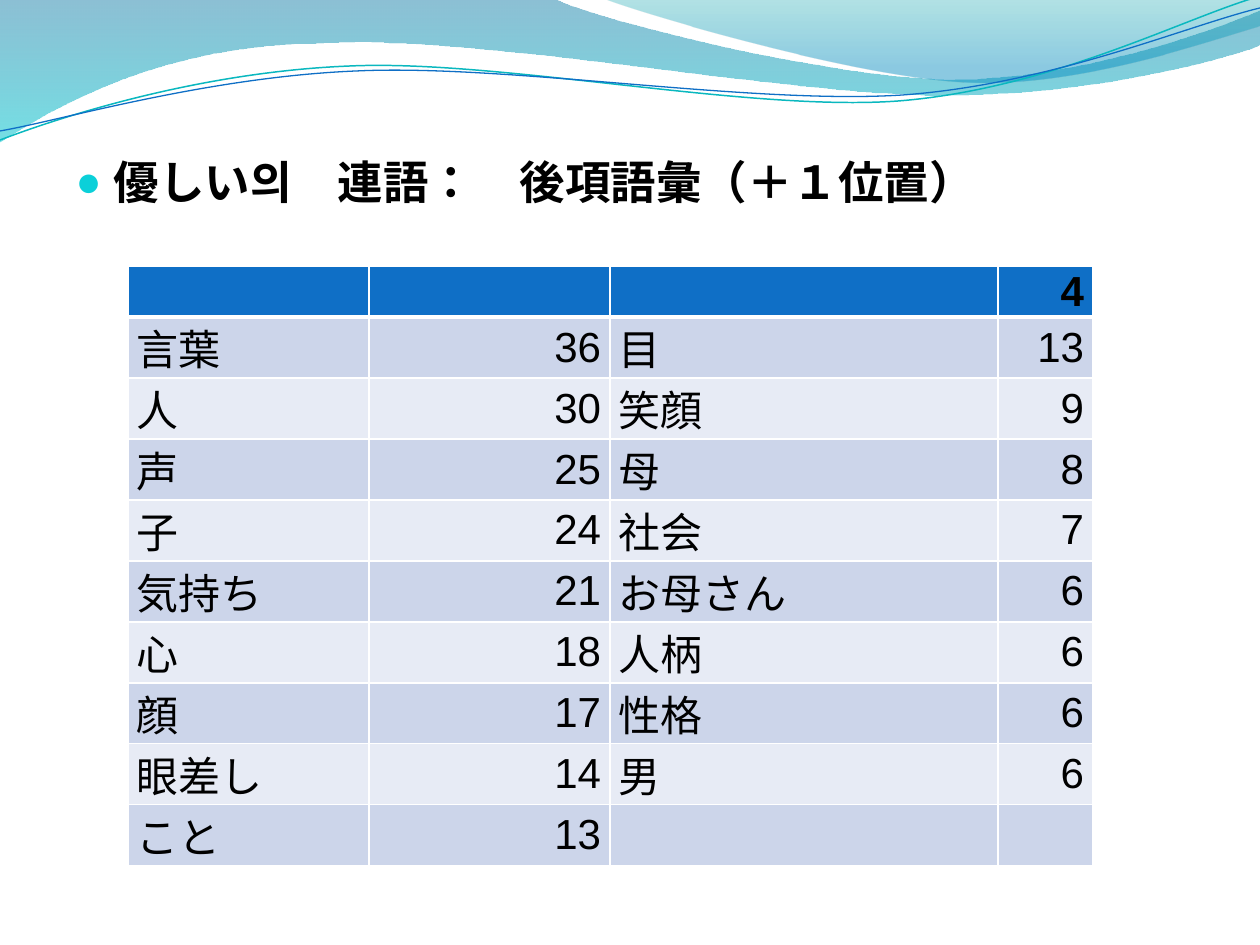
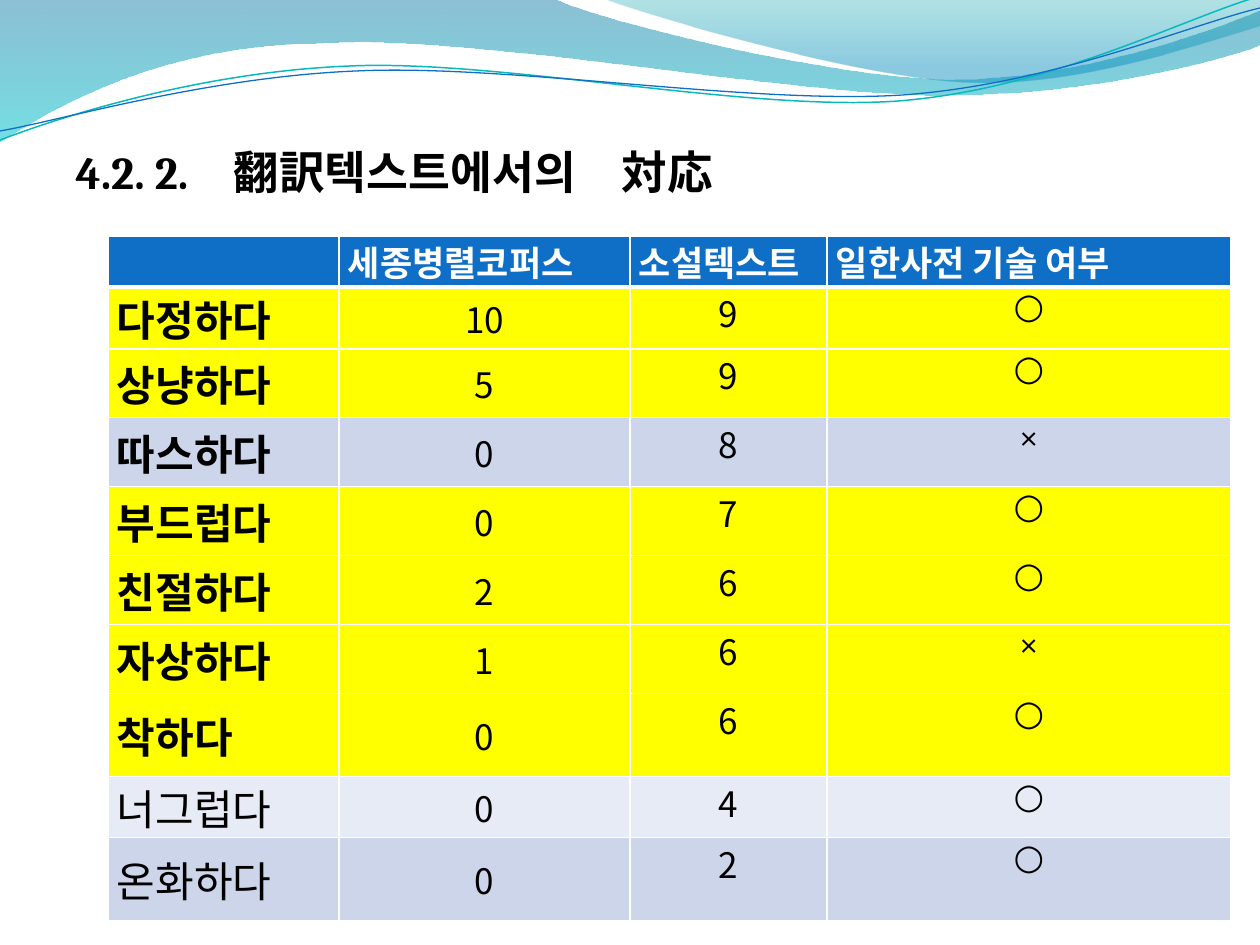
"""Build two slides of Japanese-Korean word tables under a shared wave band."""
from lxml import etree
from pptx import Presentation, util as u
from pptx.dml.color import RGBColor
from pptx.enum import lang, text
from pptx.oxml import parse_xml
from pptx.oxml.ns import nsdecls, qn

PX = 914400 / 126
BLACK = RGBColor(0, 0, 0)
WHITE = RGBColor(255, 255, 255)
BLUE = RGBColor(0x0F, 0x6F, 0xC6)
TEAL = RGBColor(0x0A, 0xB8, 0xBF)
BAND_DARK = RGBColor(0xCC, 0xD5, 0xEA)
BAND_LIGHT = RGBColor(0xE7, 0xEB, 0xF5)
YELLOW = RGBColor(255, 255, 0)
SERIF, SANS, NOTO = "Cambria", "Arial", "Noto Sans CJK KR"
LEFT, RIGHT = text.PP_ALIGN.LEFT, text.PP_ALIGN.RIGHT
CENTER, JUSTIFY = text.PP_ALIGN.CENTER, text.PP_ALIGN.JUSTIFY
TOP, MIDDLE = text.MSO_ANCHOR.TOP, text.MSO_ANCHOR.MIDDLE
JA, KO = lang.MSO_LANGUAGE_ID.JAPANESE, lang.MSO_LANGUAGE_ID.KOREAN


def px(n):
    return u.Emu(round(n * PX))


def style(p, font, size, bold=False, color=BLACK, align=LEFT):
    p.alignment = align
    p.font.name, p.font.size, p.font.bold = font, u.Pt(size), bold
    p.font.color.rgb = color


prs = Presentation()
prs.slide_width, prs.slide_height = px(1260), px(945)
slides = [prs.slides.add_slide(prs.slide_layouts[5]) for _ in range(2)]

waves = [
    ((0, -1), [(554, -1), (600, 21, 837, 79, 955, 79), (1075, 79, 1207, 33, 1260, 11), (1261, 45),
               (1239, 55, 1096, 96, 940, 95), (784, 95, 481, 35, 324, 43), (163, 44, 58, 105, -1, 142),
               (0, -1)],
     [(0, "0074A1", 45), (100, "00C6CF", 55)], None),
    ((604, -1), [(641, 14, 859, 78, 969, 82), (1079, 87, 1211, 40, 1260, 26), (1260, 0), (604, -1)],
     [(0, "00A1A9", 30), (80, "008BBF", 45)], None),
    ((0, 140), [(60, 117, 199, 72, 349, 66), (498, 59, 747, 112, 898, 101), (1050, 89, 1182, 19, 1257, -3)],
     None, (TEAL, 0.85)),
    ((0, 131), [(59, 121, 207, 77, 357, 71), (508, 64, 752, 105, 903, 95), (1053, 84, 1186, 26, 1260, 8)],
     None, (BLUE, 0.75)),
]
for (x0, y0), segments, stops, line in waves:
    fb = slides[0].shapes.build_freeform(px(x0), px(y0))
    fb.add_line_segments([(px(seg[-2]), px(seg[-1])) for seg in segments], close=line is None)
    sp = fb.convert_to_shape()
    spPr = sp.element.spPr
    for to, seg in zip(list(spPr.iter(qn("a:lnTo"))), segments):
        if len(seg) == 6:
            curve = etree.Element(qn("a:cubicBezTo"))
            for x, y in zip(seg[::2], seg[1::2]):
                etree.SubElement(curve, qn("a:pt"), x=str(px(x) - sp.left), y=str(px(y) - sp.top))
            to.getparent().replace(to, curve)
    sp.shadow.inherit = False
    sp.fill.background()
    if line:
        sp.line.color.rgb, sp.line.width = line[0], u.Pt(line[1])
    else:
        sp.line.fill.background()
        gs = "".join(f'<a:gs pos="{pos}000"><a:srgbClr val="{rgb}"><a:alpha val="{alpha}000"/>'
                     "</a:srgbClr></a:gs>" for pos, rgb, alpha in stops)
        spPr.replace(spPr.find(qn("a:noFill")), parse_xml(
            f'<a:gradFill {nsdecls("a")} rotWithShape="1"><a:gsLst>{gs}</a:gsLst>'
            '<a:lin ang="5400000" scaled="0"/></a:gradFill>'))
    prs.slide_master.element.cSld.spTree.append(sp.element)

headings = [("優しい의　連語：　後項語彙（＋１位置）", 148, 723, JA),
            ("4.2. 2.　翻訳텍스트에서의　対応", 138, 733, KO)]
for s, (words, top, height, language) in zip(slides, headings):
    sp = s.shapes.title
    sp.left, sp.top, sp.width, sp.height = px(63), px(top), px(1134), px(height)
    tf = sp.text_frame
    tf.text = words
    tf.vertical_anchor, tf.auto_size = TOP, text.MSO_AUTO_SIZE.NONE
    p = tf.paragraphs[0]
    style(p, SERIF, 26, True)
    p.space_before = u.Pt(5)
    p.runs[0].font.language_id = language
    pPr = p._p.get_or_add_pPr()
    pPr.set("marL", str(px(38)))
    pPr.set("indent", str(px(-38)))
    if language == JA:
        marks = parse_xml(f'<a:pPr {nsdecls("a")}><a:buClr><a:srgbClr val="0BD0D9"/></a:buClr>'
                          '<a:buSzPct val="95000"/><a:buFont typeface="Arial"/><a:buChar char="●"/></a:pPr>')
        for mark in list(marks):
            pPr.find(qn("a:defRPr")).addprevious(mark)

collocates = [("", "", "", "4"), ("言葉", "36", "目", "13"), ("人", "30", "笑顔", "9"),
              ("声", "25", "母", "8"), ("子", "24", "社会", "7"), ("気持ち", "21", "お母さん", "6"),
              ("心", "18", "人柄", "6"), ("顔", "17", "性格", "6"), ("眼差し", "14", "男", "6"),
              ("こと", "13", "", "")]
translations = [("", "세종병렬코퍼스", "소설텍스트 ", "일한사전 기술 여부"),
                ("다정하다", "10", "9", "○"), ("상냥하다", "5", "9", "○"), ("따스하다", "0", "8", "×"),
                ("부드럽다", "0", "7", "○"), ("친절하다", "2", "6", "○"), ("자상하다", "1", "6", "×"),
                ("착하다", "0", "6", "○"), ("너그럽다", "0", "4", "○"), ("온화하다", "0", "2", "○")]
highlighted = {1, 2, 4, 5, 6, 7}
tables = [(collocates, 128, 266, [241, 241, 388, 95], [51] * 10),
          (translations, 108, 236, [231, 291, 197, 404], [34, 62] + [69] * 5 + [83, 29, 83])]
for s, (rows, left, top, widths, heights) in zip(slides, tables):
    tb = s.shapes.add_table(len(rows), len(widths), px(left), px(top),
                            px(sum(widths)), px(sum(heights))).table
    for col, w in zip(tb.columns, widths):
        col.width = px(w)
    for row, h in zip(tb.rows, heights):
        row.height = px(h)
    for i, row in enumerate(rows):
        for j, words in enumerate(row):
            cell = tb.cell(i, j)
            cell.margin_left = cell.margin_right = px(9)
            cell.margin_top = cell.margin_bottom = 0
            tcPr = cell._tc.get_or_add_tcPr()
            for side in "LRTB":
                thick = (i, side) in ((0, "B"), (1, "T"))
                ln = etree.SubElement(tcPr, qn(f"a:ln{side}"), w=str(u.Pt(3 if thick else 1)))
                fill = etree.SubElement(ln, qn("a:solidFill"))
                etree.SubElement(fill, qn("a:srgbClr"), val=str(WHITE))
            color = BLUE if i == 0 else BAND_DARK if i % 2 else BAND_LIGHT
            if rows is translations and i in highlighted:
                color = YELLOW
            cell.fill.solid()
            cell.fill.fore_color.rgb = color
            cell.vertical_anchor = TOP if rows is translations and j > 1 else MIDDLE
            if not words:
                continue
            cell.text = words
            p = cell.text_frame.paragraphs[0]
            if rows is collocates:
                style(p, SANS, 24, i == 0, align=RIGHT if j % 2 else LEFT)
            elif i == 0:
                style(p, SERIF, 20, True, WHITE, JUSTIFY)
            elif j == 0:
                style(p, SERIF, 24, i < 8)
            else:
                style(p, SERIF if j == 3 else NOTO, 20, align=CENTER)

prs.save("out.pptx")
